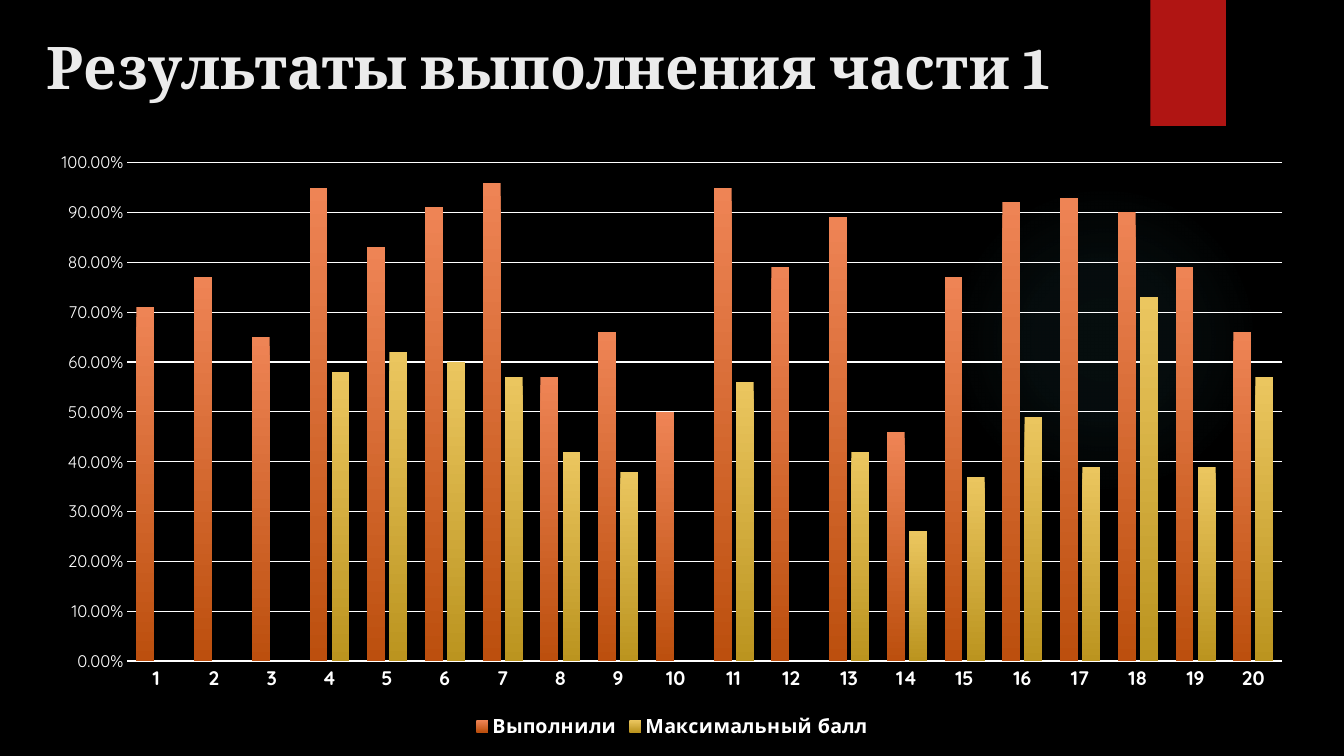
from dataclasses import dataclass

from lxml import etree
from pptx import Presentation
from pptx.chart.data import CategoryChartData
from pptx.dml.color import RGBColor as RGB
from pptx.enum.chart import XL_CHART_TYPE as CT, XL_LEGEND_POSITION as LP, XL_TICK_MARK as TM
from pptx.enum.shapes import MSO_SHAPE as SHAPE
from pptx.enum.text import MSO_ANCHOR as ANCHOR, PP_ALIGN as ALIGN
from pptx.oxml import parse_xml
from pptx.oxml.ns import qn
from pptx.util import Inches, Pt

TITLE = "Результаты выполнения части 1"
SERIES = {
    "Выполнили": (0.71, 0.77, 0.65, 0.95, 0.83, 0.91, 0.96, 0.57, 0.66, 0.5,
                  0.95, 0.79, 0.89, 0.46, 0.77, 0.92, 0.93, 0.9, 0.79, 0.66),
    "Максимальный балл": (None, None, None, 0.58, 0.62, 0.6, 0.57, 0.42, 0.38, None,
                          0.56, None, 0.42, 0.26, 0.37, 0.49, 0.39, 0.73, 0.39, 0.57),
}
BOXES = {
    "title": (0.36, 0.2, 11.03, 0.91),
    "glow": (9.41, 1.83, 3.08, 3.08),
    "ribbon": (11.41, 0, 0.75, 1.25),
    "chart": (0.36, 1.39, 12.61, 5.98),
}


@dataclass(frozen=True)
class Theme:
    back: str = "000000"
    title: str = "EBEBEB"
    text: str = "FFFFFF"
    ribbon: str = "B01513"
    glow: str = "50B9C1"
    glow_stops: tuple = ((0, 7), (36, 6), (69, 0))
    bars: tuple = (("EE8455", "BC4F0E"), ("EBC65F", "BB941F"))
    title_font: str = "Cambria"
    chart_font: str = "Quicksand"
    title_size: int = 42
    label_size: int = 14
    value_size: int = 12
    base_size: int = 10


THEME = Theme()
NS = 'xmlns:a="http://schemas.openxmlformats.org/drawingml/2006/main"'


def place(name):
    return [Inches(v) for v in BOXES[name]]


def set_font(font, size, name, color, bold=False):
    font.size, font.name, font.bold = Pt(size), name, bold
    font.color.rgb = RGB.from_string(color)


def add_block(slide, name, shape, color):
    s = slide.shapes.add_shape(shape, *place(name))
    s.shadow.inherit = False
    s.fill.solid()
    s.fill.fore_color.rgb = RGB.from_string(color)
    s.line.fill.background()
    return s


def add_glow(slide):
    s = add_block(slide, "glow", SHAPE.OVAL, THEME.glow)
    stops = "".join(
        f'<a:gs pos="{pos * 1000}"><a:srgbClr val="{THEME.glow}">'
        f'<a:alpha val="{alpha * 1000}"/></a:srgbClr></a:gs>'
        for pos, alpha in THEME.glow_stops)
    solid = s.fill._xPr.find(qn("a:solidFill"))
    solid.getparent().replace(solid, parse_xml(
        f'<a:gradFill {NS}><a:gsLst>{stops}</a:gsLst><a:path path="circle">'
        '<a:fillToRect l="50000" t="50000" r="50000" b="50000"/></a:path></a:gradFill>'))


def add_ribbon(slide):
    s = add_block(slide, "ribbon", SHAPE.RECTANGLE, THEME.ribbon)
    effects = s._element.spPr.find(qn("a:effectLst"))
    shadow = etree.SubElement(effects, qn("a:outerShdw"), blurRad=str(Pt(3)),
                              dist=str(Pt(2)), dir="5400000", rotWithShape="0")
    color = etree.SubElement(shadow, qn("a:srgbClr"), val="000000")
    etree.SubElement(color, qn("a:alpha"), val="45000")


def add_title(slide):
    s = slide.shapes.title
    s.left, s.top, s.width, s.height = place("title")
    tf = s.text_frame
    tf.text = TITLE
    tf.vertical_anchor = ANCHOR.MIDDLE
    p = tf.paragraphs[0]
    p.alignment = ALIGN.LEFT
    set_font(p.runs[0].font, THEME.title_size, THEME.title_font, THEME.title, True)


def add_results(slide):
    data = CategoryChartData(number_format="0.00%")
    data.categories = [str(n + 1) for n in range(20)]
    for name, values in SERIES.items():
        data.add_series(name, values)
    chart = slide.shapes.add_chart(CT.COLUMN_CLUSTERED, *place("chart"), data).chart
    white = RGB.from_string(THEME.text)
    set_font(chart.font, THEME.base_size, THEME.chart_font, THEME.text)
    chart.has_title = False
    chart.has_legend = True
    chart.legend.position = LP.BOTTOM
    chart.legend.include_in_layout = False
    set_font(chart.legend.font, THEME.label_size, THEME.chart_font, THEME.text, True)

    cat, val = chart.category_axis, chart.value_axis
    for axis in (cat, val):
        axis.major_tick_mark = axis.minor_tick_mark = TM.NONE
    set_font(cat.tick_labels.font, THEME.label_size, THEME.chart_font, THEME.text, True)
    cat.format.line.color.rgb = white
    cat.format.line.width = Pt(1)
    set_font(val.tick_labels.font, THEME.value_size, THEME.chart_font, THEME.text)
    val.minimum_scale, val.maximum_scale, val.major_unit = 0, 1, 0.1
    val.tick_labels.number_format = "0.00%"
    val.tick_labels.number_format_is_linked = False
    val.format.line.fill.background()
    grid = val.major_gridlines.format.line
    grid.color.rgb = white
    grid.width = Pt(0.75)

    plot = chart.plots[0]
    plot.gap_width, plot.overlap, plot.vary_by_categories = 100, -24, False
    for series, colors in zip(plot.series, THEME.bars):
        fill = series.format.fill
        fill.gradient()
        fill.gradient_angle = 270
        for stop, color, pos in zip(fill.gradient_stops, colors, (0, 1)):
            stop.color.rgb = RGB.from_string(color)
            stop.position = pos


def main():
    """Build the results slide and save it."""
    prs = Presentation()
    prs.slide_width, prs.slide_height = Inches(13.33), Inches(7.5)
    slide = prs.slides.add_slide(prs.slide_layouts[5])
    slide.background.fill.solid()
    slide.background.fill.fore_color.rgb = RGB.from_string(THEME.back)
    add_glow(slide)
    add_ribbon(slide)
    add_title(slide)
    add_results(slide)
    prs.save("out.pptx")


if __name__ == "__main__":
    main()
